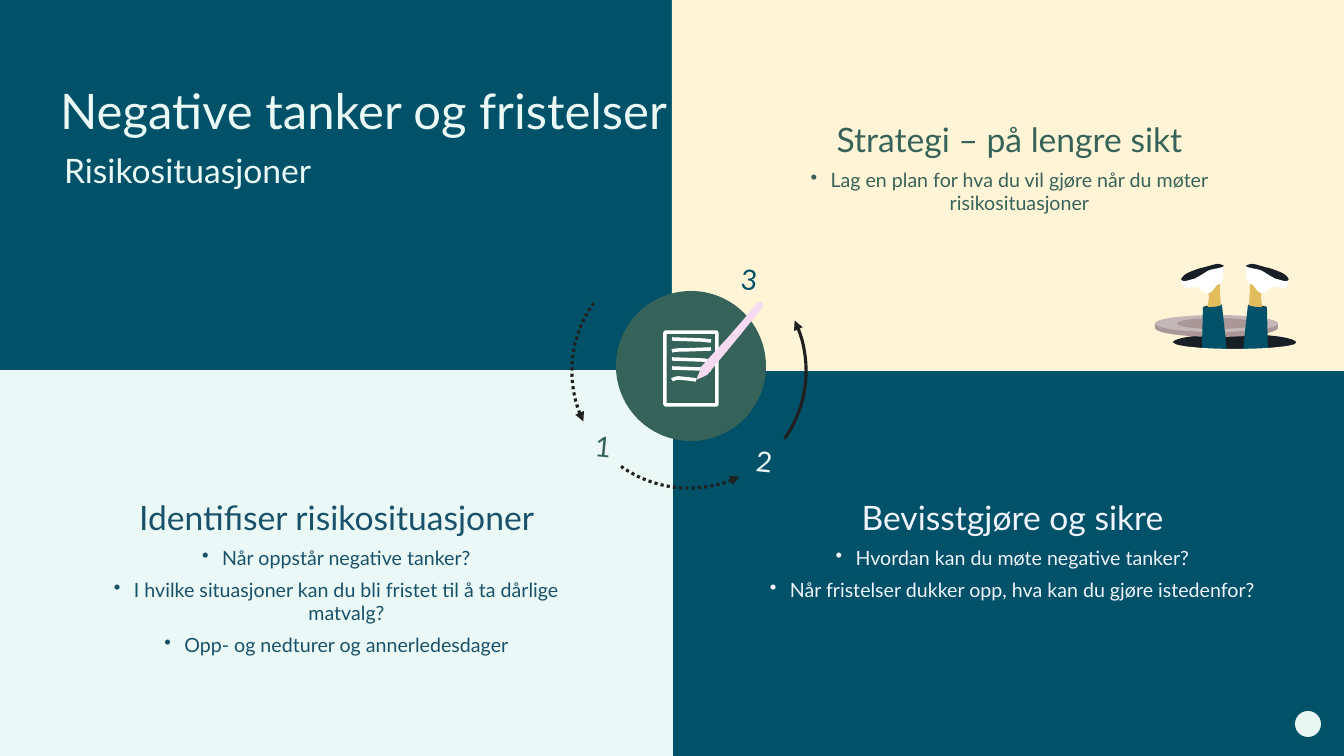
from lxml import etree
from pptx import Presentation
from pptx.dml.color import RGBColor
from pptx.enum.dml import MSO_LINE
from pptx.enum.shapes import MSO_SHAPE
from pptx.enum.text import MSO_ANCHOR, PP_ALIGN
from pptx.oxml.ns import qn
from pptx.util import Emu, Pt

RECT, OVAL, ARC, ROUND = (MSO_SHAPE.RECTANGLE, MSO_SHAPE.OVAL,
                          MSO_SHAPE.ARC, MSO_SHAPE.ROUNDED_RECTANGLE)
DOTS = MSO_LINE.ROUND_DOT
TOP, BASE = MSO_ANCHOR.TOP, MSO_ANCHOR.BOTTOM
LEFT, MID = PP_ALIGN.LEFT, PP_ALIGN.CENTER
FONT = "Lato"
TEAL, MINT, CREAM, GREEN = "015168", "EAF9F5", "FFF4D6", "366359"
INK, WHITE, PINK, TAUPE = "171E26", "FFFFFF", "F6DAF1", "AA9797"

SOLE = [(11, 2), (13, 0, 18, 0, 18, 0), (24, 1, 28, 3, 34, 4),
        (40, 6, 46, 8, 49, 10), (52, 12, 54, 15, 54, 16),
        (54, 17, 49, 20, 49, 20), (29, 13), (16, 6), (16, 6, 11, 3, 11, 2)]
SHOE = [(13, 19), (13, 19, 11, 6, 11, 5), (11, 2), (11, 2, 11, 3, 16, 4),
        (19, 5, 25, 5, 29, 8), (32, 10, 37, 13, 41, 15),
        (43, 15, 50, 18, 52, 17), (54, 16, 54, 15, 54, 15),
        (54, 15, 54, 18, 53, 20), (53, 21, 51, 23, 50, 24),
        (49, 24, 48, 24, 47, 24), (46, 24, 43, 23, 41, 23),
        (39, 23, 37, 23, 35, 25), (34, 26, 32, 27, 31, 28),
        (30, 29, 28, 29, 27, 29), (26, 29, 25, 29, 24, 28),
        (22, 27, 19, 22, 18, 21), (16, 20, 13, 19, 13, 19)]
SHIN = [(14, 43), (14, 43, 15, 27, 15, 25), (15, 15), (29, 22),
        (29, 22, 26, 29, 26, 33), (26, 36, 28, 46, 28, 46)]
CUFF = [(32, 43), (32, 43, 16, 38, 13, 41), (24, 46)]
PANTS = [(8, 91), (8, 84, 13, 41, 13, 41), (19, 44, 32, 43, 32, 43),
         (32, 43, 33, 84, 33, 92), (33, 100, 7, 97, 8, 91)]
LEG = [(CUFF, INK), (SHIN, "E2BC5D"), (SOLE, INK), (SHOE, WHITE), (PANTS, TEAL)]
EDGE = [(-80, 60), (43, 60), (43, 64), (43, 69, 16, 73, -18, 73),
        (-53, 73, -80, 69, -80, 64)]
GROUND = [(61, 79), (61, 82, 34, 85, 0, 85), (-34, 85, -61, 82, -61, 79),
          (-88, 79), (-88, 106), (95, 106), (95, 79)]
STROKE = [(56, 48), (83, 49), (89, 49, 92, 50, 95, 50)]
BACK = [(95, 58), (68, 59), (62, 59, 60, 59, 56, 60)]
TAIL = [(80, 89), (74, 88, 71, 88, 63, 87), (60, 87, 58, 88, 56, 89)]
SHAFT = [(121, 48), (146, 17), (148, 16, 147, 14, 146, 12),
         (145, 11, 143, 11, 141, 13), (115, 43), (116, 44, 118, 44, 119, 45),
         (120, 46, 120, 47, 121, 48)]
TIP = [(84, 80), (83, 82, 81, 87, 80, 89), (82, 88, 87, 86, 89, 85),
       (90, 84, 92, 84, 92, 83), (121, 48), (120, 47, 120, 46, 119, 45),
       (118, 44, 116, 44, 115, 43), (85, 76), (84, 78, 84, 79, 84, 80)]


def px(n):
    """Turn pixels into EMU."""
    return Emu(round(n * 914400 / 100.8))


def rgb(code):
    """Turn a hex string into a colour."""
    return RGBColor.from_string(code)


def paint(shape, fill=None, line=None, width=1):
    """Set fill and line and drop the shadow."""
    shape.shadow.inherit = False
    if fill:
        shape.fill.solid()
        shape.fill.fore_color.rgb = rgb(fill)
    else:
        shape.fill.background()
    if line:
        shape.line.color.rgb = rgb(line)
        shape.line.width = Pt(width)
    else:
        shape.line.fill.background()
    return shape


def block(slide, kind, box, fill=None, line=None, width=1):
    """Add a painted preset shape."""
    return paint(slide.shapes.add_shape(kind, *map(px, box)), fill, line, width)


def trace(path):
    """Turn points and cubic curves into a list of points."""
    dots = [path[0]]
    for part in path[1:]:
        if len(part) == 2:
            dots.append(part)
            continue
        ends = (dots[-1], part[:2], part[2:4], part[4:])
        for step in range(1, 9):
            t = step / 8
            ks = ((1 - t) ** 3, 3 * t * (1 - t) ** 2, 3 * t * t * (1 - t), t ** 3)
            dots.append(tuple(sum(k * e[i] for k, e in zip(ks, ends))
                              for i in (0, 1)))
    return dots


def draw(slide, path, x, y, fill=None, line=None, width=1, flip=1):
    """Add an outline placed from a given point."""
    dots = [(px(x + flip * a), px(y + b)) for a, b in trace(path)]
    pen = slide.shapes.build_freeform(*dots[0], scale=1.0)
    pen.add_line_segments(dots[1:], close=bool(fill))
    return paint(pen.convert_to_shape(), fill, line, width)


def frame(shape, pads, anchor):
    """Set up a wrapping text frame."""
    tf = shape.text_frame
    tf.word_wrap = True
    tf.vertical_anchor = anchor
    (tf.margin_left, tf.margin_top,
     tf.margin_right, tf.margin_bottom) = map(px, pads)
    return tf


def write(para, text, size, color, align=LEFT):
    """Add one run to a paragraph."""
    para.alignment = align
    run = para.add_run()
    run.text = text
    run.font.name, run.font.size = FONT, Pt(size)
    run.font.color.rgb = rgb(color)


def label(slide, box, text, size, color, pads, anchor=TOP, gap=1.0, turn=0):
    """Add a one-line text box."""
    area = slide.shapes.add_textbox(*map(px, box))
    area.rotation = turn
    para = frame(area, pads, anchor).paragraphs[0]
    para.line_spacing = gap
    write(para, text, size, color)


def panel(slide, box, fill, color, top, head, items):
    """Add a filled quarter with a heading and bullets."""
    tf = frame(block(slide, RECT, box, fill), (80, top, 80, 80), TOP)
    write(tf.paragraphs[0], head, 24, color, MID)
    for item in items:
        para = tf.add_paragraph()
        para.space_before = Pt(6)
        props = para._p.get_or_add_pPr()
        props.set("marL", str(px(20)))
        props.set("indent", str(px(-20)))
        etree.SubElement(props, qn("a:buChar"), char="•")
        write(para, item, 14, color, MID)


def titles(slide, box):
    """Add the title quarter."""
    x, y = box[:2]
    block(slide, RECT, box, TEAL)
    pads = (0, 0, 0, 0)
    label(slide, (x + 64, y + 60, 672, 130), "Risikosituasjoner", 24, MINT,
          pads, BASE, 0.85)
    label(slide, (x + 60, y + 67, 867, 73), "Negative tanker og fristelser", 35,
          MINT, pads, BASE, 0.85)


def cycle(slide, box):
    """Add the three arrows and their numbers."""
    x, y = box[:2]
    for turn, dash in ((320.5, DOTS), (230.5, DOTS), (140.5, None)):
        arc = block(slide, ARC, box, None, "202020", 2.25)
        arc.adjustments[0], arc.adjustments[1] = 116.363, 152.965
        arc.rotation = turn
        if dash:
            arc.line.dash_style = dash
        etree.SubElement(arc.line._get_or_add_ln(), qn("a:headEnd"),
                         type="triangle")
    for text, dx, dy, color in (("1", 13, 176, GREEN), ("2", 174, 191, MINT),
                                ("3", 159, 9, TEAL)):
        label(slide, (x + dx, y + dy, 158, 44), text, 20, color,
              (10, 5, 10, 5), turn=5.5)


def badge(slide, box):
    """Add the round badge with a note and a pen."""
    x, y = box[:2]
    block(slide, OVAL, box, GREEN)
    page = block(slide, ROUND, (x + 49, y + 41, 52, 73), None, WHITE, 2.5)
    page.adjustments[0] = 0.023
    for path, dy in ((STROKE, 0), (BACK, 0), (STROKE, 20), (STROKE, 29), (TAIL, 0)):
        draw(slide, path, x, y + dy, None, WHITE, 2.5)
    for path in (SHAFT, TIP):
        draw(slide, path, x, y, PINK)


def diver(slide, box):
    """Add the legs that stick out of a hole."""
    x, y, w, h = box
    mid = x + 80
    block(slide, OVAL, (x + 18, y + 70, 123, 17), INK)
    draw(slide, EDGE, mid, y, TAUPE)
    block(slide, OVAL, (x, y + 51, 123, 17), "C4B7B7")
    block(slide, OVAL, (x + 22, y + 54, 79, 11), TAUPE)
    for flip in (-1, 1):
        for path, fill in LEG:
            draw(slide, path, mid, y, fill, flip=flip)
    draw(slide, GROUND, mid, y, CREAM)


def main():
    """Build and save the slide."""
    deck = Presentation()
    deck.slide_width, deck.slide_height = px(1344), px(756)
    slide = deck.slides.add_slide(deck.slide_layouts[6])
    slide.background.fill.solid()
    slide.background.fill.fore_color.rgb = rgb(TEAL)
    panel(slide, (676, 370, 673, 386), TEAL, "F0F4FF", 127,
          "Bevisstgjøre og sikre",
          ["Hvordan kan du møte negative tanker?",
           "Når fristelser dukker opp, hva kan du gjøre istedenfor?"])
    panel(slide, (0, 370, 673, 386), MINT, "19516A", 127,
          "Identifiser risikosituasjoner",
          ["Når oppstår negative tanker?",
           "I hvilke situasjoner kan du bli fristet til å ta dårlige matvalg?",
           "Opp- og nedturer og annerledesdager"])
    titles(slide, (0, 0, 672, 370))
    panel(slide, (672, 0, 675, 371), CREAM, GREEN, 119,
          "Strategi – på lengre sikt",
          ["Lag en plan for hva du vil gjøre når du møter risikosituasjoner"])
    diver(slide, (1155, 264, 142, 106))
    cycle(slide, (572, 254, 234, 234))
    badge(slide, (616, 291, 150, 150))
    block(slide, OVAL, (1295, 711, 26, 26), "E8F7F2")
    deck.save("out.pptx")


if __name__ == "__main__":
    main()
